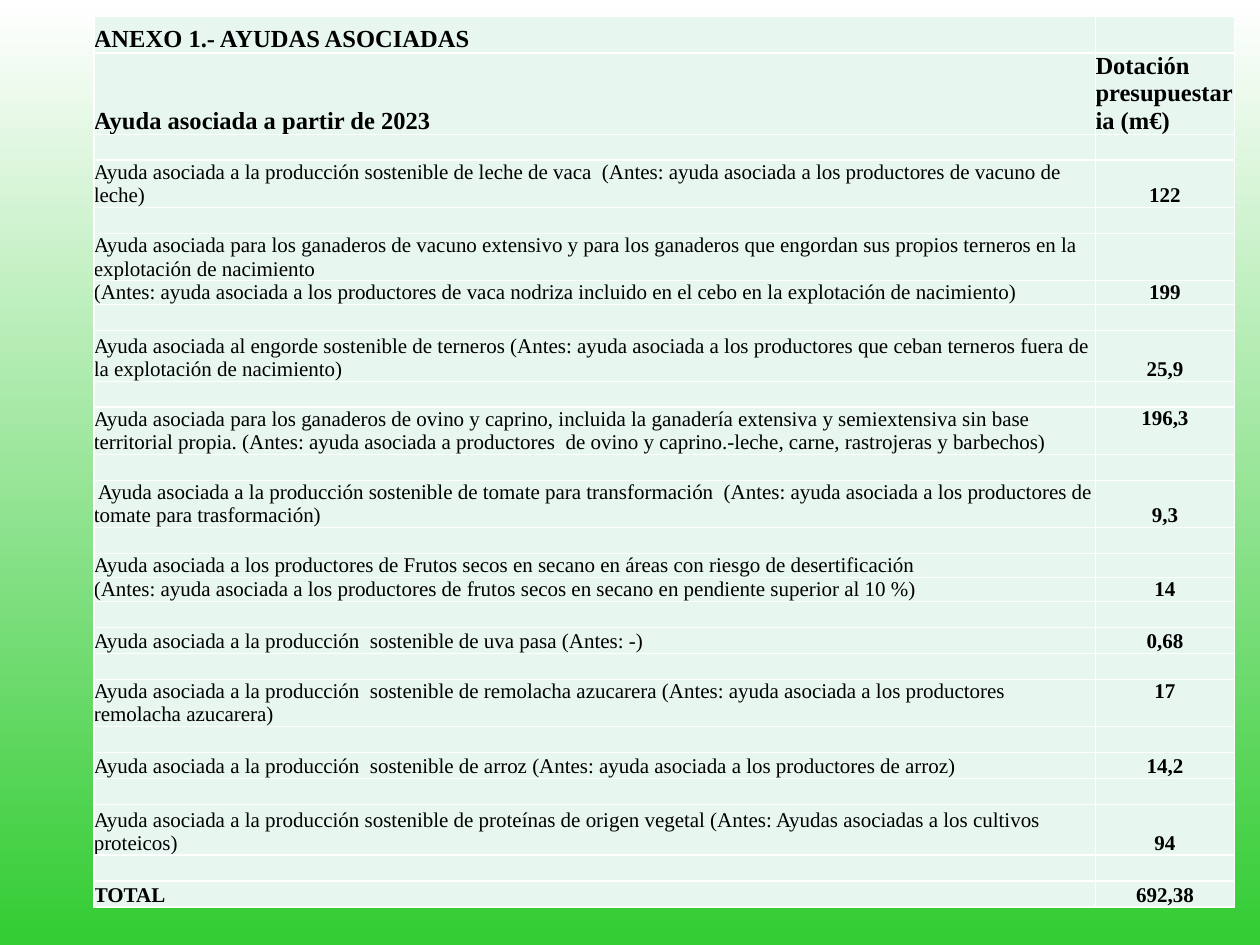
from pptx import Presentation
from pptx.dml.color import RGBColor
from pptx.enum.text import MSO_ANCHOR as Anchor, PP_ALIGN as Align
from pptx.oxml import parse_xml
from pptx.oxml.ns import nsdecls
from pptx.util import Pt


def color(value):
    return RGBColor.from_string(value)


def add_borders(cell):
    for side in ("lnL", "lnR", "lnT", "lnB"):
        cell._tc.get_or_add_tcPr().append(parse_xml(
            f'<a:{side} {nsdecls("a")} w="12700"><a:solidFill>'
            f'<a:srgbClr val="FFFFFF"/></a:solidFill></a:{side}>'))


# Row heights in points
GAP, ONE, TWO, TALL = 14.85, 13.7, 27, 29
gap_row = (GAP, "", "")

# Height, aid, budget
rows = [
    (21, "ANEXO 1.- AYUDAS ASOCIADAS", ""),
    (46.3, "Ayuda asociada a partir de 2023", "Dotación presupuestaria (m€)"),
    gap_row,
    (TWO, "Ayuda asociada a la producción sostenible de leche de vaca  (Antes: ayuda "
          "asociada a los productores de vacuno de leche)", "122"),
    gap_row,
    (TWO, "Ayuda asociada para los ganaderos de vacuno extensivo y para los ganaderos que "
          "engordan sus propios terneros en la explotación de nacimiento", ""),
    (ONE, "(Antes: ayuda asociada a los productores de vaca nodriza incluido en el cebo en "
          "la explotación de nacimiento)", "199"),
    gap_row,
    (TALL, "Ayuda asociada al engorde sostenible de terneros (Antes: ayuda asociada a los "
           "productores que ceban terneros fuera de la explotación de nacimiento)", "25,9"),
    gap_row,
    (TWO, "Ayuda asociada para los ganaderos de ovino y caprino, incluida la ganadería "
          "extensiva y semiextensiva sin base territorial propia. (Antes: ayuda asociada a "
          "productores  de ovino y caprino.-leche, carne, rastrojeras y barbechos)", "196,3"),
    gap_row,
    (TWO, " Ayuda asociada a la producción sostenible de tomate para transformación  (Antes: "
          "ayuda asociada a los productores de tomate para trasformación)", "9,3"),
    gap_row,
    (ONE, "Ayuda asociada a los productores de Frutos secos en secano en áreas con riesgo de "
          "desertificación", ""),
    (ONE, "(Antes: ayuda asociada a los productores de frutos secos en secano en pendiente "
          "superior al 10 %)", "14"),
    gap_row,
    (GAP, "Ayuda asociada a la producción  sostenible de uva pasa (Antes: -)", "0,68"),
    gap_row,
    (TWO, "Ayuda asociada a la producción  sostenible de remolacha azucarera (Antes: ayuda "
          "asociada a los productores remolacha azucarera)", "17"),
    gap_row,
    (GAP, "Ayuda asociada a la producción  sostenible de arroz (Antes: ayuda asociada a los "
          "productores de arroz)", "14,2"),
    gap_row,
    (TALL, "Ayuda asociada a la producción sostenible de proteínas de origen vegetal (Antes: "
           "Ayudas asociadas a los cultivos proteicos)", "94"),
    gap_row,
    (GAP, "TOTAL", "692,38"),
]
top_values = ("196,3", "17")
cell_format = {"margin_left": 0, "margin_right": 0, "margin_top": 0, "margin_bottom": 0}

# Page with a white to green background
deck = Presentation()
deck.slide_width, deck.slide_height = Pt(720), Pt(540)
page = deck.slides.add_slide(deck.slide_layouts[6])
back = page.background.fill
back.gradient()
back.gradient_angle = 270
for stop, position, value in zip(back.gradient_stops, (0, 1), ("FFFFFF", "33CC33")):
    stop.position = position
    stop.color.rgb = color(value)

# Table frame
widths = (572.4, 79.4)
table = page.shapes.add_table(len(rows), len(widths), Pt(53.6), Pt(9.3), Pt(sum(widths)),
                              Pt(sum(row[0] for row in rows))).table
table.first_row = table.horz_banding = False
for column, width in zip(table.columns, widths):
    column.width = Pt(width)

# Cells
for row_index, (height, *texts) in enumerate(rows):
    table.rows[row_index].height = Pt(height)
    heading = row_index < 2
    for column_index, text in enumerate(texts):
        cell = table.cell(row_index, column_index)
        add_borders(cell)
        cell.fill.solid()
        cell.fill.fore_color.rgb = color("E7F6EF")
        for name, value in cell_format.items():
            setattr(cell, name, value)
        cell.vertical_anchor = Anchor.TOP if text in top_values else Anchor.BOTTOM
        para = cell.text_frame.paragraphs[0]
        if not text:
            # A small end mark keeps empty rows low
            para._p.append(parse_xml(f'<a:endParaRPr {nsdecls("a")} sz="800"/>'))
            continue
        para.alignment = Align.CENTER if column_index and not heading else Align.LEFT
        span = para.add_run()
        span.text = text
        span.font.color.rgb = color("000000")
        font_format = {"name": "Times New Roman", "size": Pt(14 if heading else 12),
                       "bold": heading or column_index == 1 or text == "TOTAL"}
        for name, value in font_format.items():
            setattr(span.font, name, value)

deck.save("out.pptx")
